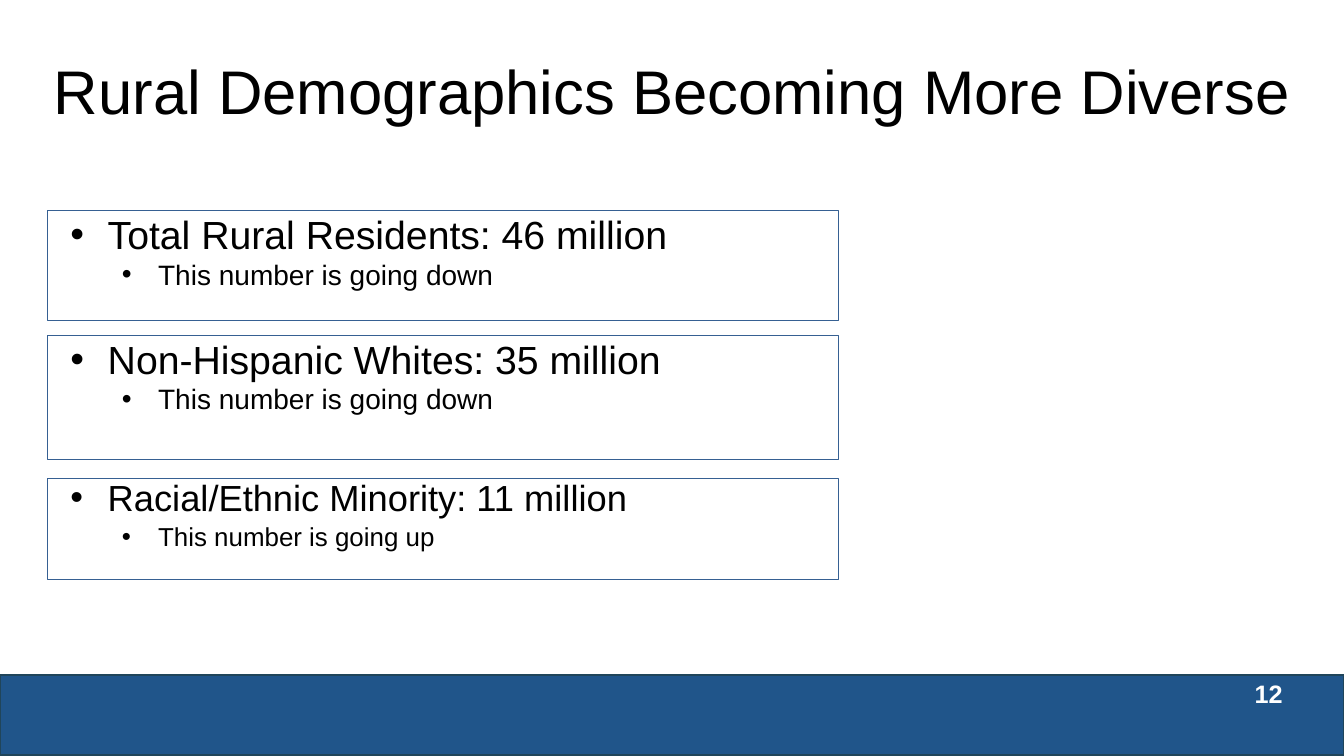
from dataclasses import dataclass

from lxml.etree import SubElement
from pptx import Presentation
from pptx.dml.color import RGBColor
from pptx.enum.shapes import MSO_SHAPE as Shape
from pptx.enum.text import MSO_ANCHOR as Anchor, PP_ALIGN as Align
from pptx.oxml.ns import qn
from pptx.util import Inches, Pt

TITLE = "Rural Demographics Becoming More Diverse"
PAGE_NUMBER = "12"
# top, height, line spacing, gap before detail, (text, size) of headline and detail
GROUPS = [
    (2.09, 1.09, 0.9, 2, ("Total Rural Residents: 46 million", 28),
     ("This number is going down", 20)),
    (3.33, 1.23, 0.9, 2, ("Non-Hispanic Whites: 35 million", 28),
     ("This number is going down", 20)),
    (4.75, 1, 0.8, 6, ("Racial/Ethnic Minority: 11 million", 25.9),
     ("This number is going up", 18.5)),
]
GROUP_LEFT, GROUP_WIDTH = 0.47, 7.85
INDENTS = [(0.5, -0.37), (1, -0.36)]


@dataclass(frozen=True)
class Theme:
    font: str = "Arial"
    text: str = "000000"
    footer: str = "20558A"
    footer_line: str = "20455A"
    box_line: str = "366092"
    on_footer: str = "FFFFFF"
    title_size: float = 44
    number_size: float = 18


THEME = Theme()


def write(paragraph, text, size, color=THEME.text, bold=False, align=Align.LEFT, spacing=1.0):
    paragraph.text = text
    paragraph.alignment = align
    paragraph.line_spacing = spacing
    font = paragraph.font
    font.name, font.size, font.bold = THEME.font, Pt(size), bold
    font.color.rgb = RGBColor.from_string(color)


def add_bullet(paragraph, level):
    margin, hanging = INDENTS[level]
    paragraph.level = level
    properties = paragraph._p.get_or_add_pPr()
    properties.set("marL", str(Inches(margin)))
    properties.set("indent", str(Inches(hanging)))
    color = SubElement(properties, qn("a:buClr"))
    SubElement(color, qn("a:srgbClr"), val=THEME.text)
    SubElement(properties, qn("a:buFont"), typeface=THEME.font)
    SubElement(properties, qn("a:buChar"), char="•")


def add_box(slide, left, top, width, height, line, line_width, fill=None):
    box = slide.shapes.add_shape(
        Shape.RECTANGLE, Inches(left), Inches(top), Inches(width), Inches(height))
    box.shadow.inherit = False
    if fill:
        box.fill.solid()
        box.fill.fore_color.rgb = RGBColor.from_string(fill)
    else:
        box.fill.background()
    box.line.color.rgb = RGBColor.from_string(line)
    box.line.width = Pt(line_width)
    return box


def add_group(slide, top, height, spacing, gap, *lines):
    box = add_box(slide, GROUP_LEFT, top, GROUP_WIDTH, height, THEME.box_line, 0.75)
    frame = box.text_frame
    frame.vertical_anchor = Anchor.TOP
    for level, (text, size) in enumerate(lines):
        paragraph = frame.add_paragraph() if level else frame.paragraphs[0]
        add_bullet(paragraph, level)
        write(paragraph, text, size, spacing=spacing)
        if level:
            paragraph.space_before = Pt(gap)


def main():
    presentation = Presentation()
    presentation.slide_width, presentation.slide_height = Inches(13.33), Inches(7.5)
    slide = presentation.slides.add_slide(presentation.slide_layouts[5])

    add_box(slide, 0, 6.7, 13.33, 0.79, THEME.footer_line, 1.5, THEME.footer)

    title = slide.shapes.title
    title.left, title.top = Inches(0.34), Inches(0.2)
    title.width, title.height = Inches(12.66), Inches(1.48)
    title.text_frame.vertical_anchor = Anchor.MIDDLE
    write(title.text_frame.paragraphs[0], TITLE, THEME.title_size,
          align=Align.CENTER, spacing=0.9)

    for group in GROUPS:
        add_group(slide, *group)

    number = slide.shapes.add_textbox(Inches(10.95), Inches(6.68), Inches(1.87), Inches(0.4))
    number.text_frame.word_wrap = True
    write(number.text_frame.paragraphs[0], PAGE_NUMBER, THEME.number_size,
          color=THEME.on_footer, bold=True, align=Align.RIGHT)

    presentation.save("out.pptx")


if __name__ == "__main__":
    main()
